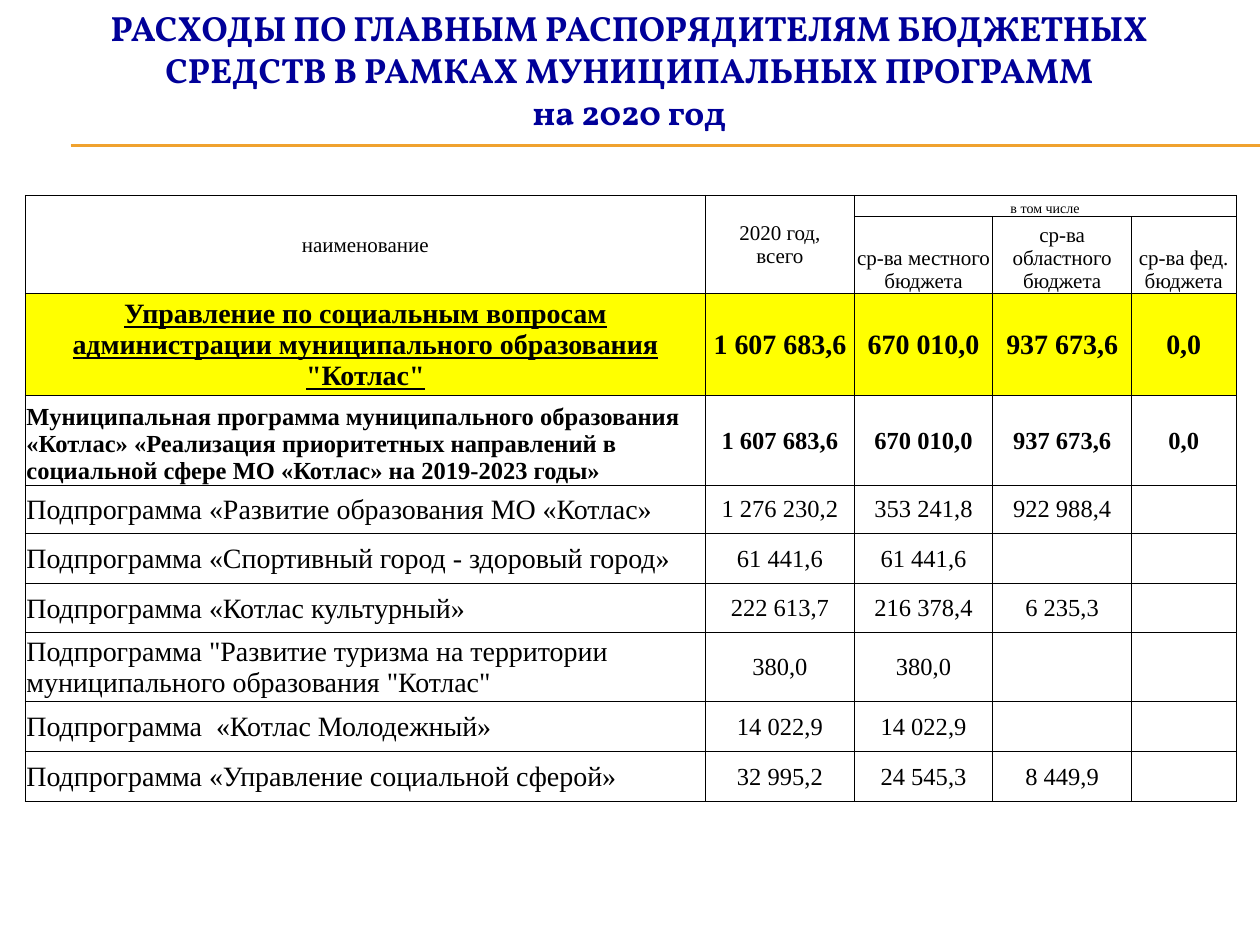
from copy import deepcopy

from lxml import etree
from pptx import Presentation
from pptx import util as u
from pptx.dml.color import RGBColor
from pptx.enum import shapes, text
from pptx.oxml.ns import qn

COLORS = {"title": "000099", "text": "000000", "border": "000000",
          "rule": "F0A22E", "highlight": "FFFF00"}
CENTER, LEFT = text.PP_ALIGN.CENTER, text.PP_ALIGN.LEFT
MIDDLE, BOTTOM = text.MSO_ANCHOR.MIDDLE, text.MSO_ANCHOR.BOTTOM

TITLE = ("РАСХОДЫ ПО ГЛАВНЫМ РАСПОРЯДИТЕЛЯМ БЮДЖЕТНЫХ СРЕДСТВ "
         "В РАМКАХ МУНИЦИПАЛЬНЫХ ПРОГРАММ\nна 2020 год")
COLUMN_WIDTHS = [5.4, 1.18, 1.1, 1.1, 0.83]
ROW_HEIGHTS = [0.17, 0.61, 0.75, 0.71, 0.38, 0.4, 0.39, 0.5, 0.4, 0.4]
HEADER = [
    ["наименование", "2020 год,\nвсего", "в том числе", "", ""],
    ["", "", "ср-ва местного бюджета", "ср-ва областного бюджета",
     "ср-ва фед. бюджета"],
]
DEPARTMENT = ['Управление по социальным вопросам администрации муниципального '
              'образования "Котлас"',
              "1 607 683,6", "670 010,0", "937 673,6", "0,0"]
PROGRAM = ["Муниципальная программа муниципального образования «Котлас» "
           "«Реализация приоритетных направлений в социальной сфере "
           "МО «Котлас» на 2019-2023 годы»",
           "1 607 683,6", "670 010,0", "937 673,6", "0,0"]
SUBPROGRAMS = [
    ["Подпрограмма «Развитие образования МО «Котлас»",
     "1 276 230,2", "353 241,8", "922 988,4", ""],
    ["Подпрограмма «Спортивный город - здоровый город»",
     "61 441,6", "61 441,6", "", ""],
    ["Подпрограмма «Котлас культурный»",
     "222 613,7", "216 378,4", "6 235,3", ""],
    ['Подпрограмма "Развитие туризма на территории муниципального '
     'образования "Котлас"', "380,0", "380,0", "", ""],
    ["Подпрограмма  «Котлас Молодежный»",
     "14 022,9", "14 022,9", "", ""],
    ["Подпрограмма «Управление социальной сферой»",
     "32 995,2", "24 545,3", "8 449,9", ""],
]


def write_text(frame, content, size=14, font="Times New Roman", color="text",
               bold=False, underline=False, align=CENTER):
    paragraph = frame.paragraphs[0]
    paragraph.text = content
    paragraph.alignment = align
    for run in paragraph.runs:
        run.font.name = font
        run.font.size = u.Pt(size)
        run.font.bold = bold
        run.font.underline = underline
        run.font.color.rgb = RGBColor.from_string(COLORS[color])
    # Line breaks take the size of the text around them
    for line_break in paragraph._p.findall(qn("a:br")):
        line_break.append(deepcopy(paragraph.runs[0]._r.rPr))


class SlideBuilder:
    def __init__(self, slide, title_font="Vollkorn"):
        self.slide = slide
        self.title_font = title_font

    def title(self, content, left, top, width, height):
        shape = self.slide.shapes.title
        shape.left, shape.top = u.Inches(left), u.Inches(top)
        shape.width, shape.height = u.Inches(width), u.Inches(height)
        shape.text_frame.word_wrap = True
        shape.text_frame.auto_size = text.MSO_AUTO_SIZE.SHAPE_TO_FIT_TEXT
        write_text(shape.text_frame, content, size=20, font=self.title_font,
                   color="title", bold=True)

    def rule(self, left, right, y):
        line = self.slide.shapes.add_connector(
            shapes.MSO_CONNECTOR.STRAIGHT,
            u.Inches(left), u.Inches(y), u.Inches(right), u.Inches(y))
        line.line.color.rgb = RGBColor.from_string(COLORS["rule"])
        line.line.width = u.Pt(0.75)
        etree.SubElement(line._element.spPr, qn("a:effectLst"))

    def table(self, left, top, widths, heights):
        frame = self.slide.shapes.add_table(
            len(heights), len(widths), u.Inches(left), u.Inches(top),
            u.Inches(sum(widths)), u.Inches(sum(heights)))
        table = frame.table
        table.first_row = table.horz_banding = False
        for column, width in zip(table.columns, widths):
            column.width = u.Inches(width)
        for row, height in zip(table.rows, heights):
            row.height = u.Inches(height)
        for cell in table.iter_cells():
            cell.margin_left = cell.margin_right = u.Inches(0.01)
            cell.margin_top, cell.margin_bottom = u.Inches(0.01), 0
            self.border(cell)
            cell.fill.background()
        return table

    def border(self, cell):
        properties = cell._tc.get_or_add_tcPr()
        for side in ("lnL", "lnR", "lnT", "lnB"):
            line = etree.SubElement(properties, qn(f"a:{side}"),
                                    w=str(u.Pt(0.5)))
            fill = etree.SubElement(line, qn("a:solidFill"))
            etree.SubElement(fill, qn("a:srgbClr"), val=COLORS["border"])

    def cell(self, cell, content, anchor=MIDDLE, fill=None, **style):
        cell.vertical_anchor = anchor
        if fill:
            cell.fill.solid()
            cell.fill.fore_color.rgb = RGBColor.from_string(COLORS[fill])
        if content:
            write_text(cell.text_frame, content, **style)

    def row(self, table, index, values, name_style, **style):
        for column, value in enumerate(values):
            extra = name_style if column == 0 else {}
            self.cell(table.cell(index, column), value, **{**style, **extra})


def main():
    presentation = Presentation()
    presentation.slide_width = u.Inches(10)
    presentation.slide_height = u.Inches(7.5)
    slide = presentation.slides.add_slide(presentation.slide_layouts[5])
    builder = SlideBuilder(slide)

    # Title with a double rule below
    for y in (1.15, 1.16):
        builder.rule(0.56, 10, y)
    builder.title(TITLE, 0.35, 0, 9.29, 1.1)

    # Table header
    table = builder.table(0.2, 1.55, COLUMN_WIDTHS, ROW_HEIGHTS)
    for column in (0, 1):
        table.cell(0, column).merge(table.cell(1, column))
        builder.cell(table.cell(0, column), HEADER[0][column], size=12)
    table.cell(0, 2).merge(table.cell(0, 4))
    builder.cell(table.cell(0, 2), HEADER[0][2], anchor=BOTTOM, size=8)
    for column in (2, 3, 4):
        builder.cell(table.cell(1, column), HEADER[1][column],
                     anchor=BOTTOM, size=12)

    # Table body
    builder.row(table, 2, DEPARTMENT, {"underline": True},
                size=16, bold=True, fill="highlight")
    builder.row(table, 3, PROGRAM, {"align": LEFT, "anchor": BOTTOM},
                bold=True)
    for index, values in enumerate(SUBPROGRAMS, start=4):
        builder.row(table, index, values, {"align": LEFT, "size": 16})

    presentation.save("out.pptx")


if __name__ == "__main__":
    main()
